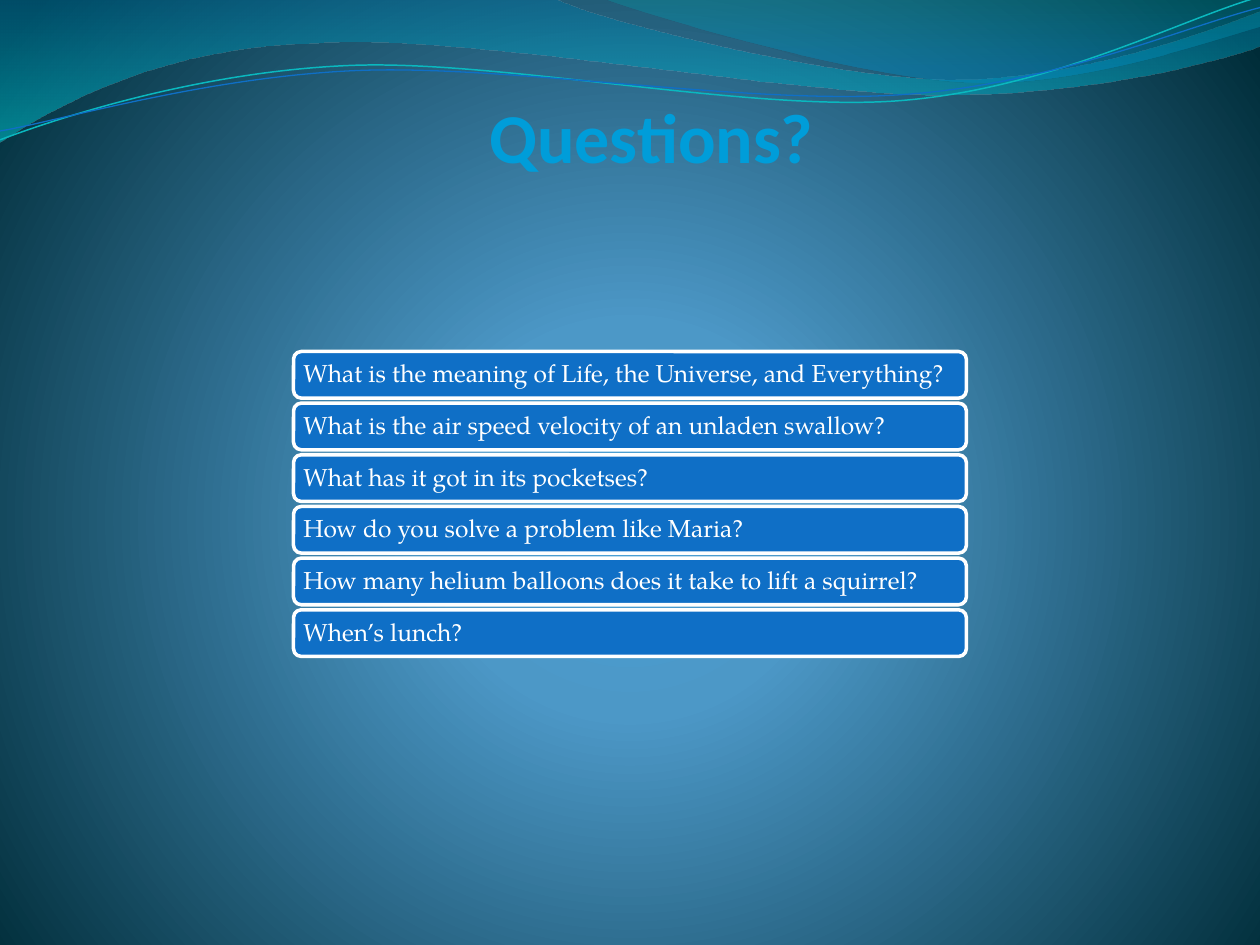
from dataclasses import dataclass
from math import cos, radians, sin

from lxml import etree
from pptx import Presentation
from pptx.dml.color import RGBColor
from pptx.enum.shapes import MSO_SHAPE
from pptx.enum.text import MSO_ANCHOR, MSO_AUTO_SIZE, PP_ALIGN
from pptx.oxml.ns import qn
from pptx.util import Inches, Pt

ROUNDED = MSO_SHAPE.ROUNDED_RECTANGLE
MIDDLE, BOTTOM = MSO_ANCHOR.MIDDLE, MSO_ANCHOR.BOTTOM
LEFT, CENTER = PP_ALIGN.LEFT, PP_ALIGN.CENTER
NO_AUTOFIT = MSO_AUTO_SIZE.NONE

TITLE = "Questions?"
QUESTIONS = [
    "What is the meaning of Life, the Universe, and Everything?",
    "What is the air speed velocity of an unladen swallow?",
    "What has it got in its pocketses?",
    "How do you solve a problem like Maria?",
    "How many helium balloons does it take to lift a squirrel?",
    "When’s lunch?",
]


@dataclass(frozen=True)
class Theme:
    title: str = "009DD9"
    bar: str = "0F6FC6"
    light: str = "FFFFFF"
    teal_strand: str = "0AB8BF"
    heading_font: str = "Calibri"
    body_font: str = "TeX Gyre Pagella"
    title_size: int = 40
    body_size: int = 14
    # gradient stops: position %, colour, opacity %
    backdrop: tuple = ((0, "4AA0D6", 100), (25, "4C98C7", 100), (100, "002C38", 100))
    wide_wave: tuple = ((0, "0074A1", 45), (100, "00C6CF", 55))
    corner_wave: tuple = ((0, "00A1A9", 30), (80, "008BBF", 45))


THEME = Theme()
SLIDE_W, SLIDE_H = 10, 7.5
BAR_W, BAR_H, BAR_PITCH = 5.34, 0.37, 0.41
BARS_TOP = 2.79
STRAND_TILT = -2.7
STRAND_CENTRE = (4.99, 0.58)

# Outlines in inches: each step is a tuple of points,
# one point for a straight line and three for a Bézier curve.
WAVES = [
    (THEME.wide_wave, [
        ((0, 0),), ((4.4, -0.01),),
        ((4.76, 0.17), (6.64, 0.63), (7.58, 0.63)),
        ((8.53, 0.63), (9.58, 0.26), (10, 0.09)),
        ((10.01, 0.36),),
        ((9.83, 0.44), (8.7, 0.76), (7.46, 0.75)),
        ((6.22, 0.75), (3.82, 0.28), (2.57, 0.34)),
        ((1.29, 0.36), (0.46, 0.83), (-0.01, 1.13))]),
    (THEME.corner_wave, [
        ((4.79, -0.01),),
        ((5.09, 0.11), (6.82, 0.62), (7.69, 0.65)),
        ((8.56, 0.69), (9.61, 0.32), (10, 0.21)),
        ((10, 0),)]),
]
STRANDS = [
    (THEME.teal_strand, 0.85, [
        ((0, 1.11),),
        ((0.48, 0.93), (1.58, 0.57), (2.77, 0.52)),
        ((3.95, 0.47), (5.93, 0.89), (7.13, 0.8)),
        ((8.33, 0.71), (9.38, 0.15), (9.98, -0.02))]),
    (THEME.bar, 0.75, [
        ((0, 1.04),),
        ((0.47, 0.96), (1.64, 0.61), (2.83, 0.56)),
        ((4.03, 0.51), (5.97, 0.84), (7.17, 0.75)),
        ((8.36, 0.67), (9.41, 0.21), (10, 0.06))]),
]


def turn(point, degrees):
    """Turn a point clockwise about the centre of the strands."""
    (x, y), (cx, cy), angle = point, STRAND_CENTRE, radians(degrees)
    dx, dy = x - cx, y - cy
    return (cx + dx * cos(angle) - dy * sin(angle),
            cy + dx * sin(angle) + dy * cos(angle))


def draw_outline(slide, outline, closed):
    """Draw a freeform through the end points, then bend its curved steps."""
    steps = [[(Inches(x), Inches(y)) for x, y in step] for step in outline]
    ends = [step[-1] for step in steps]
    builder = slide.shapes.build_freeform(*ends[0])
    builder.add_line_segments(ends[1:], close=False)
    if closed:
        builder.add_line_segments([], close=True)
    shape = builder.convert_to_shape()
    shape.shadow.inherit = False
    segments = list(shape.element.iter(qn("a:lnTo")))
    for segment, step in zip(segments, steps[1:]):
        if len(step) == 3:
            curve = etree.Element(qn("a:cubicBezTo"))
            for x, y in step:
                etree.SubElement(curve, qn("a:pt"),
                                 x=str(x - shape.left), y=str(y - shape.top))
            segment.getparent().replace(segment, curve)
    return shape


def set_gradient(fill, holder, stops, radial=False):
    """Give the fill inside the holder element its stops and direction."""
    fill.gradient()
    grad = holder.find(".//" + qn("a:gradFill"))
    for child in list(grad):
        grad.remove(child)
    stop_list = etree.SubElement(grad, qn("a:gsLst"))
    for position, colour, opacity in stops:
        stop = etree.SubElement(stop_list, qn("a:gs"), pos=str(position * 1000))
        rgb = etree.SubElement(stop, qn("a:srgbClr"), val=colour)
        if opacity < 100:
            etree.SubElement(rgb, qn("a:alpha"), val=str(opacity * 1000))
    if radial:
        circle = etree.SubElement(grad, qn("a:path"), path="circle")
        etree.SubElement(circle, qn("a:fillToRect"),
                         l="10000", t="110000", r="10000", b="100000")
    else:
        etree.SubElement(grad, qn("a:lin"), ang="5400000", scaled="1")


def write(shape, text, *, font, size, colour, bold=False, align=LEFT,
          anchor=MIDDLE, inset=0, spacing=1.0):
    frame = shape.text_frame
    frame.word_wrap = True
    frame.auto_size = NO_AUTOFIT
    frame.vertical_anchor = anchor
    frame.margin_left = frame.margin_right = Inches(inset)
    frame.margin_top = frame.margin_bottom = Inches(inset)
    paragraph = frame.paragraphs[0]
    paragraph.alignment = align
    paragraph.line_spacing = spacing
    run = paragraph.add_run()
    run.text = text
    run.font.name = font
    run.font.size = Pt(size)
    run.font.bold = bold
    run.font.color.rgb = RGBColor.from_string(colour)


def set_line(shape, colour, width):
    shape.line.color.rgb = RGBColor.from_string(colour)
    shape.line.width = Pt(width)


def add_waves(slide):
    for stops, outline in WAVES:
        wave = draw_outline(slide, outline, closed=True)
        set_gradient(wave.fill, wave.element.spPr, stops)
        wave.line.fill.background()
    for colour, width, outline in STRANDS:
        level = [[turn(point, -STRAND_TILT) for point in step] for step in outline]
        strand = draw_outline(slide, level, closed=False)
        strand.rotation = STRAND_TILT
        strand.fill.background()
        set_line(strand, colour, width)


def add_title(slide):
    title = slide.shapes.title
    title.left, title.top = Inches(0.92), Inches(0.67)
    title.width, title.height = Inches(8.5), Inches(0.74)
    write(title, TITLE, font=THEME.heading_font, size=THEME.title_size,
          colour=THEME.title, bold=True, align=CENTER, anchor=BOTTOM)


def add_questions(slide):
    left = (SLIDE_W - BAR_W) / 2
    for row, question in enumerate(QUESTIONS):
        bar = slide.shapes.add_shape(
            ROUNDED, Inches(left), Inches(BARS_TOP + row * BAR_PITCH),
            Inches(BAR_W), Inches(BAR_H))
        bar.shadow.inherit = False
        bar.fill.solid()
        bar.fill.fore_color.rgb = RGBColor.from_string(THEME.bar)
        set_line(bar, THEME.light, 2)
        write(bar, question, font=THEME.body_font, size=THEME.body_size,
              colour=THEME.light, inset=0.06, spacing=0.9)


def main():
    deck = Presentation()
    deck.slide_width, deck.slide_height = Inches(SLIDE_W), Inches(SLIDE_H)
    slide = deck.slides.add_slide(deck.slide_layouts[5])
    set_gradient(slide.background.fill, slide.element, THEME.backdrop, radial=True)
    add_waves(slide)
    add_title(slide)
    add_questions(slide)
    deck.save("out.pptx")


if __name__ == "__main__":
    main()
